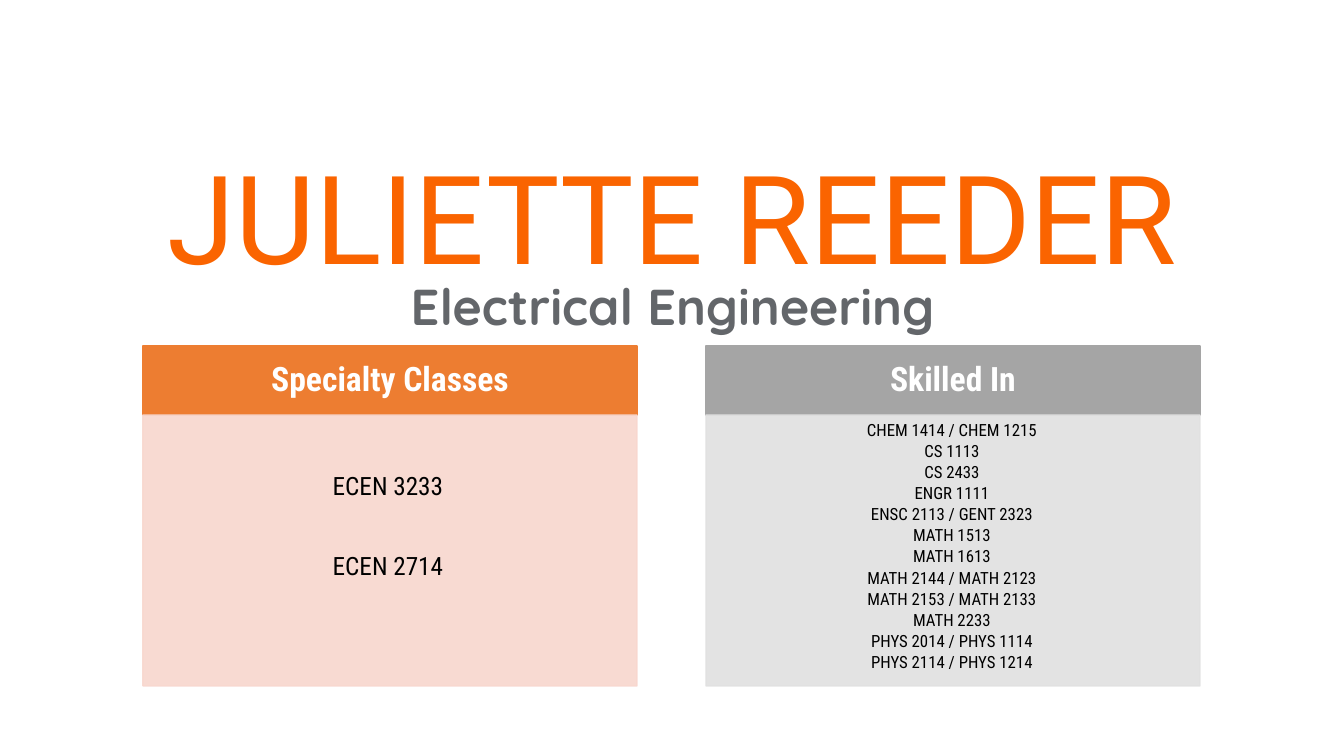
from lxml import etree
from pptx import Presentation
from pptx.dml.color import RGBColor
from pptx.enum.shapes import MSO_SHAPE
from pptx.enum.text import MSO_ANCHOR, MSO_AUTO_SIZE, PP_ALIGN
from pptx.oxml.ns import qn
from pptx.util import Pt

RECT = MSO_SHAPE.RECTANGLE
TOP, MIDDLE = MSO_ANCHOR.TOP, MSO_ANCHOR.MIDDLE
CENTER = PP_ALIGN.CENTER
GROW = MSO_AUTO_SIZE.SHAPE_TO_FIT_TEXT

# Content
COLORS = {
    "name": "FA6400", "major": "63666A", "white": "FFFFFF", "black": "000000",
    "orange": "ED7D31", "peach": "F8D7CE", "gray": "A5A5A5", "pale": "E1E1E1",
}
TITLES = [
    # text, top, height, font, size, bold, color
    ("JULIETTE REEDER", 136, 159, "Roboto", 88, False, "name"),
    ("Electrical Engineering", 270, 72, "Quicksand", 36, True, "major"),
]
PANELS = [
    {
        "head": "Specialty Classes", "colors": ("orange", "peach"),
        "items": ["ECEN 3233", "ECEN 2714"],
        "size": 18, "indent": 19, "inset": (10, 10, 14, 16),
        "para": {"line_spacing": 2.5, "space_after": Pt(3.2)},
    },
    {
        "head": "Skilled In", "colors": ("gray", "pale"),
        "items": [
            "CHEM 1414 / CHEM 1215", "CS 1113", "CS 2433", "ENGR 1111",
            "ENSC 2113 / GENT 2323", "MATH 1513", "MATH 1613",
            "MATH 2144 / MATH 2123", "MATH 2153 / MATH 2133", "MATH 2233",
            "PHYS 2014 / PHYS 1114", "PHYS 2114 / PHYS 1214",
        ],
        "size": 12, "indent": 12, "inset": (7, 7, 9, 10),
        "para": {"line_spacing": 0.9, "space_after": Pt(2.1)},
    },
]
HEAD_PARA = {"line_spacing": 0.9}
HEAD_INSET = (19, 11, 19, 11)
PANEL_FONT = "Roboto Condensed"

# Layout in px
WIDTH, HEIGHT = 1344, 756
TITLE_X, TITLE_W = 64, 1217
LEFT, STEP, PANEL_W = 143, 563, 494
HEAD_Y, HEAD_H, BODY_H = 346, 69, 271


def px(n):
    return round(n * 914400 / 100.8)


def rgb(key):
    return RGBColor.from_string(COLORS[key])


def put(obj, values):
    for key, value in values.items():
        setattr(obj, key, value)


def write(frame, lines, font, color, para, indent=0):
    for i, line in enumerate(lines):
        p = frame.paragraphs[0] if i == 0 else frame.add_paragraph()
        put(p, {"alignment": CENTER, **para})
        if indent:
            p.level = 1
            props = p._p.get_or_add_pPr()
            props.set("marL", str(px(indent)))
            props.set("indent", str(-px(indent)))
        run = p.add_run()
        run.text = line
        put(run.font, font)
        run.font.color.rgb = rgb(color)


def box(x, y, h, color, inset, anchor, alpha=None):
    shape = slide.shapes.add_shape(RECT, px(x), px(y), px(PANEL_W), px(h))
    shape.shadow.inherit = False
    shape.fill.solid()
    shape.fill.fore_color.rgb = rgb(color)
    shape.line.color.rgb = rgb(color)
    shape.line.width = Pt(1)
    if alpha:
        for node in shape._element.spPr.iter(qn("a:srgbClr")):
            etree.SubElement(node, qn("a:alpha"), val=str(alpha * 1000))
    frame = shape.text_frame
    sides = ("margin_left", "margin_top", "margin_right", "margin_bottom")
    put(frame, dict(zip(sides, map(px, inset))))
    put(frame, {"word_wrap": True, "vertical_anchor": anchor})
    return frame


deck = Presentation()
put(deck, {"slide_width": px(WIDTH), "slide_height": px(HEIGHT)})
slide = deck.slides.add_slide(deck.slide_layouts[6])

# Name and major
for text, y, h, face, size, bold, color in TITLES:
    frame = slide.shapes.add_textbox(px(TITLE_X), px(y), px(TITLE_W), px(h)).text_frame
    put(frame, {"word_wrap": True, "auto_size": GROW})
    write(frame, [text], {"name": face, "size": Pt(size), "bold": bold}, color, {})

# Class panels
for i, panel in enumerate(PANELS):
    x = LEFT + i * STEP
    dark, light = panel["colors"]
    head = box(x, HEAD_Y, HEAD_H, dark, HEAD_INSET, MIDDLE)
    write(head, [panel["head"]],
          {"name": PANEL_FONT, "size": Pt(24), "bold": True}, "white", HEAD_PARA)
    body = box(x, HEAD_Y + HEAD_H, BODY_H, light, panel["inset"], TOP, alpha=90)
    write(body, panel["items"], {"name": PANEL_FONT, "size": Pt(panel["size"])},
          "black", panel["para"], panel["indent"])

deck.save("out.pptx")
